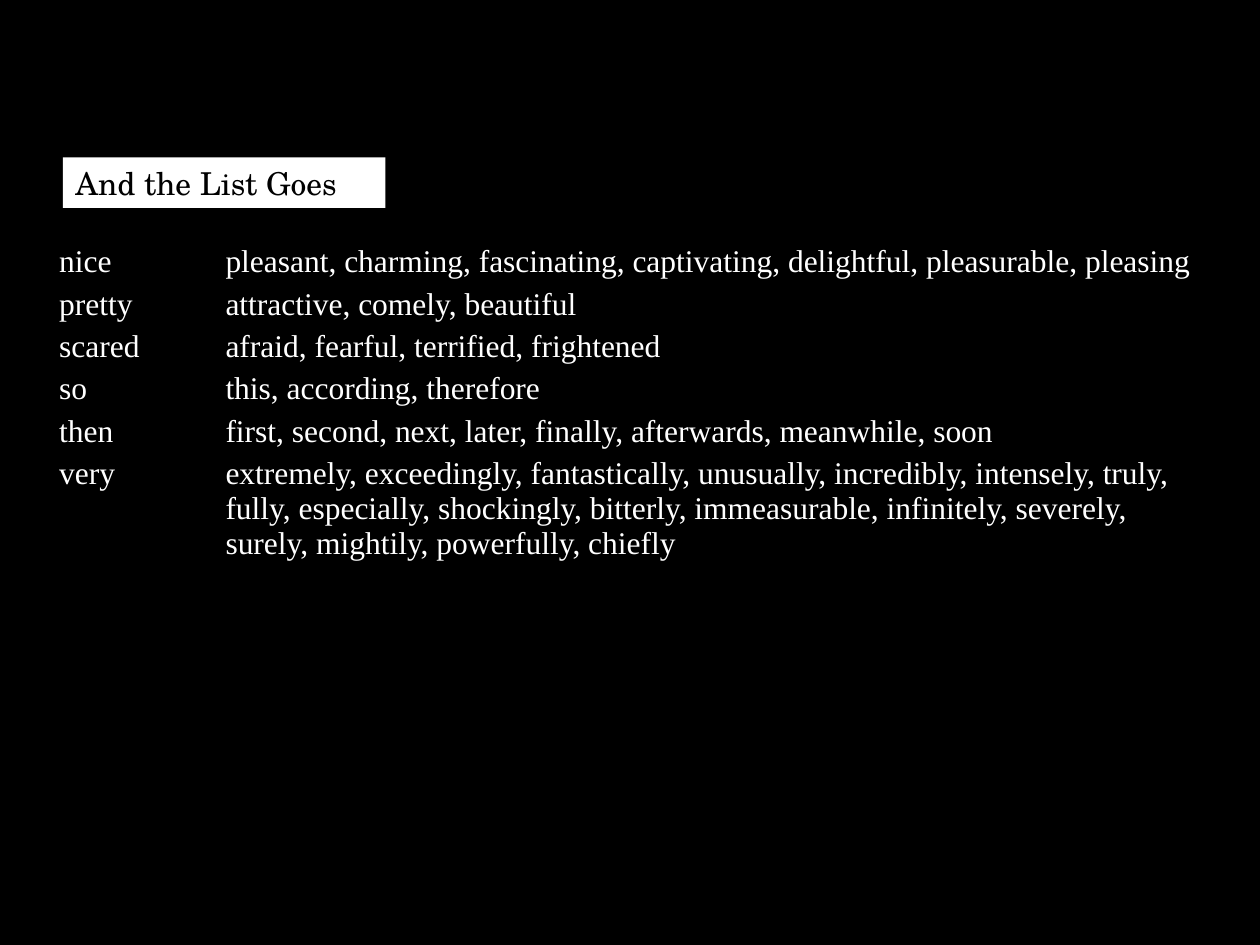
from dataclasses import dataclass

from lxml import etree
from pptx import Presentation
from pptx.dml.color import RGBColor
from pptx.enum.shapes import MSO_SHAPE
from pptx.enum.text import MSO_ANCHOR, PP_ALIGN
from pptx.oxml.ns import qn
from pptx.util import Inches, Pt

RECTANGLE = MSO_SHAPE.RECTANGLE
TOP = MSO_ANCHOR.TOP
LEFT = PP_ALIGN.LEFT


@dataclass(frozen=True)
class Theme:
    dark: str = "000000"
    light: str = "FFFFFF"
    title_font: str = "TeX Gyre Schola"
    body_font: str = "Times New Roman"
    size: int = 18
    border: int = 1


theme = Theme()

SYNONYMS = [
    ("", ""),
    ("nice", "pleasant, charming, fascinating, captivating, delightful, pleasurable, pleasing"),
    ("pretty", "attractive, comely, beautiful"),
    ("scared", "afraid, fearful, terrified, frightened"),
    ("so", "this, according, therefore"),
    ("then", "first, second, next, later, finally, afterwards, meanwhile, soon"),
    ("very", "extremely, exceedingly, fantastically, unusually, incredibly, intensely, truly, "
             "fully, especially, shockingly, bitterly, immeasurable, infinitely, severely, "
             "surely, mightily, powerfully, chiefly"),
]
COLUMN_WIDTHS = [1.32, 7.85]
ROW_HEIGHTS = [0.83] + [0.33] * 5 + [0.96]


def style_text(paragraph, font_name, color):
    paragraph.alignment = LEFT
    paragraph.font.name = font_name
    paragraph.font.size = Pt(theme.size)
    paragraph.font.color.rgb = RGBColor.from_string(color)


def add_borders(cell):
    properties = cell._tc.get_or_add_tcPr()
    for side in ("lnL", "lnR", "lnT", "lnB"):
        line = etree.SubElement(properties, qn(f"a:{side}"), w=str(Pt(theme.border)))
        fill = etree.SubElement(line, qn("a:solidFill"))
        etree.SubElement(fill, qn("a:srgbClr"), val=theme.dark)


# Slide and background
presentation = Presentation()
presentation.slide_width = Inches(10)
presentation.slide_height = Inches(7.5)
slide = presentation.slides.add_slide(presentation.slide_layouts[6])
slide.background.fill.solid()
slide.background.fill.fore_color.rgb = RGBColor.from_string(theme.dark)

# Synonym table, with an empty top row behind the title
table = slide.shapes.add_table(
    len(SYNONYMS), len(COLUMN_WIDTHS), Inches(0.42), Inches(1.08),
    Inches(sum(COLUMN_WIDTHS)), Inches(sum(ROW_HEIGHTS))).table
table.first_row = False
table.horz_banding = False
for column, width in zip(table.columns, COLUMN_WIDTHS):
    column.width = Inches(width)
for row, height, words in zip(table.rows, ROW_HEIGHTS, SYNONYMS):
    row.height = Inches(height)
    for cell, text in zip(row.cells, words):
        cell.margin_left = cell.margin_right = Inches(0.05)
        cell.margin_top = cell.margin_bottom = Inches(0.03)
        cell.vertical_anchor = TOP
        add_borders(cell)
        cell.fill.background()
        cell.text_frame.text = text
        style_text(cell.text_frame.paragraphs[0], theme.body_font, theme.light)

# Title label
title = slide.shapes.add_shape(RECTANGLE, Inches(0.5), Inches(1.25), Inches(2.56), Inches(0.4))
title.shadow.inherit = False
title.fill.solid()
title.fill.fore_color.rgb = RGBColor.from_string(theme.light)
title.line.fill.background()
title.text_frame.word_wrap = False
title.text_frame.vertical_anchor = TOP
title.text_frame.text = "And the List Goes"
style_text(title.text_frame.paragraphs[0], theme.title_font, theme.dark)

presentation.save("out.pptx")
